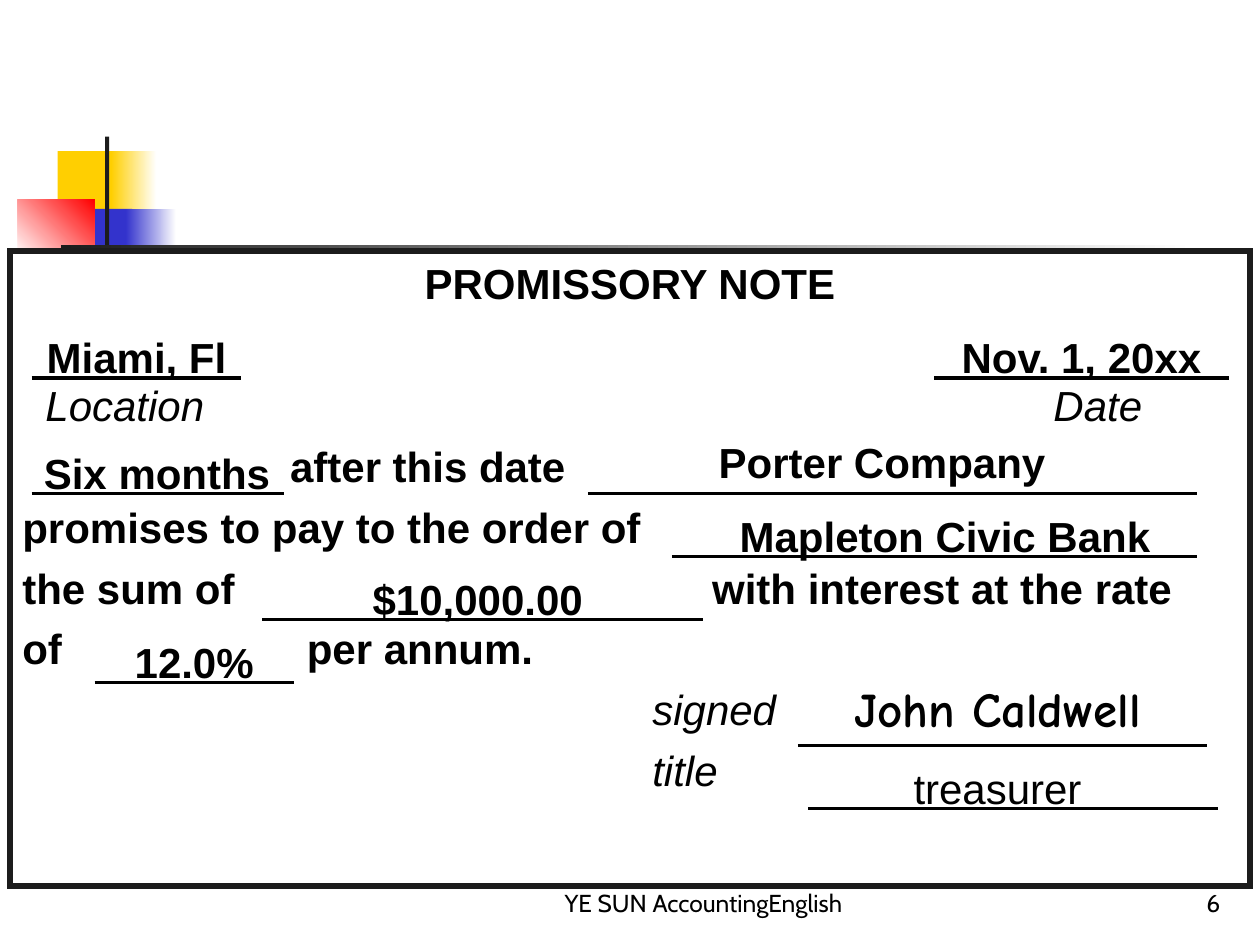
from typing import NamedTuple

import lxml.etree
import pptx
import pptx.dml.color
import pptx.enum.shapes
import pptx.enum.text
import pptx.oxml.ns
import pptx.util

# The grid has 120 columns and 90 rows, each a twelfth of an inch
CELL = pptx.util.Inches(1) // 12
ALIGN = pptx.enum.text.PP_ALIGN
ANCHOR = pptx.enum.text.MSO_ANCHOR
BLACK, CHARCOAL, WHITE = "000000", "1C1C1C", "FFFFFF"
YELLOW, BLUE, RED = "FFCF01", "3333CC", "FF0000"


class Area(NamedTuple):
    column: float
    row: float
    columns: float
    rows: float


class Block(NamedTuple):
    area: Area
    start: str
    end: str = ""
    angle: int = 0


class Style(NamedTuple):
    size: float = 24
    font: str = "Arial"
    bold: bool = True
    italic: bool = False


class Entry(NamedTuple):
    text: str
    area: Area
    align: ALIGN = ALIGN.CENTER
    style: Style = Style()
    anchor: ANCHOR = ANCHOR.TOP


class Rule(NamedTuple):
    first: float
    last: float
    row: float


class NoteLine(NamedTuple):
    text: str
    style: Style = Style()
    tabs: tuple[float, ...] = ()  # tab stops, in columns from the text edge
    space: float = 6
    align: ALIGN = ALIGN.LEFT


ITALIC = Style(bold=False, italic=True)
FOOTER = Style(14, "Cabin", False)

BLOCKS = [
    Block(Area(5.5, 14.4, 5.8, 6.2), YELLOW),
    Block(Area(10.6, 14.4, 4.3, 6.2), YELLOW, WHITE),
    Block(Area(7.1, 19.9, 5.5, 6.2), BLUE),
    Block(Area(12, 19.9, 4.8, 6.2), BLUE, WHITE),
    Block(Area(1.7, 19, 7.3, 5.5), WHITE, RED, 45),
    Block(Area(10, 13, 0.4, 13.8), CHARCOAL),
    Block(Area(5.8, 23.3, 108, 0.4), CHARCOAL, WHITE),
]

PANEL = Area(0.95, 23.9, 118.1, 60.5)
NOTE_LINES = [
    NoteLine("PROMISSORY NOTE", space=0, align=ALIGN.CENTER),
    NoteLine("\tLocation\tDate", ITALIC, (2.2, 98.2), 41),
    NoteLine("\tafter this date", tabs=(25.5,)),
    NoteLine("promises to pay to the order of"),
    NoteLine("the sum of\twith interest at the rate", tabs=(65.7,)),
    NoteLine("of\tper annum.", tabs=(27.1,)),
    NoteLine("\tsigned", ITALIC, (60,)),
    NoteLine("\ttitle", ITALIC, (60,)),
]

RULES = [
    Rule(3, 23, 36), Rule(89, 117, 36),
    Rule(3, 27, 47), Rule(56, 114, 47),
    Rule(64, 114, 53), Rule(25, 67, 59), Rule(9, 28, 65),
    Rule(76, 115, 71), Rule(77, 116, 77),
]

ENTRIES = [
    Entry("Miami, Fl", Area(3, 31, 20, 6)),
    Entry("Nov. 1, 20xx", Area(88, 31, 30, 6)),
    Entry("Six months", Area(3, 42, 24, 6), ALIGN.LEFT),
    Entry("Porter Company", Area(55, 41, 58, 6)),
    Entry("Mapleton Civic Bank", Area(65, 48, 50, 6)),
    Entry("$10,000.00", Area(25, 54, 41, 6)),
    Entry("12.0%", Area(9, 60, 19, 6)),
    Entry("John Caldwell", Area(75, 64, 40, 6.7), style=Style(28, "Comic Neue")),
    Entry("treasurer", Area(75, 72, 40, 6), style=Style(bold=False)),
    Entry("YE SUN AccountingEnglish", Area(48, 82, 38, 6), ALIGN.CENTER, FOOTER, ANCHOR.BOTTOM),
    Entry("6", Area(92.4, 82, 25, 6), ALIGN.RIGHT, FOOTER, ANCHOR.BOTTOM),
]


def color(value: str) -> pptx.dml.color.RGBColor:
    return pptx.dml.color.RGBColor.from_string(value)


def cells(*counts: float) -> list[int]:
    return [round(count * CELL) for count in counts]


def add_run(paragraph, text: str, style: Style) -> None:
    run = paragraph.add_run()
    run.text = text
    run.font.size = pptx.util.Pt(style.size)
    run.font.name = style.font
    run.font.bold = style.bold
    run.font.italic = style.italic
    run.font.color.rgb = color(BLACK)


def draw_block(slide, block: Block):
    kind = pptx.enum.shapes.MSO_SHAPE.RECTANGLE
    shape = slide.shapes.add_shape(kind, *cells(*block.area))
    shape.shadow.inherit = False
    shape.line.fill.background()
    if block.end:
        shape.fill.gradient()
        shape.fill.gradient_angle = block.angle
        for stop, value in zip(shape.fill.gradient_stops, (block.start, block.end)):
            stop.color.rgb = color(value)
    else:
        shape.fill.solid()
        shape.fill.fore_color.rgb = color(block.start)
    return shape


def set_tabs(paragraph, stops: tuple[float, ...]) -> None:
    properties = paragraph._p.get_or_add_pPr()
    tabs = lxml.etree.SubElement(properties, pptx.oxml.ns.qn("a:tabLst"))
    for position in cells(*stops):
        lxml.etree.SubElement(tabs, pptx.oxml.ns.qn("a:tab"), pos=str(position), algn="l")


def draw_note(slide) -> None:
    panel = draw_block(slide, Block(PANEL, WHITE))
    panel.line.color.rgb = color(CHARCOAL)
    panel.line.width = pptx.util.Pt(3)
    # Square corners
    outline = panel.line._get_or_add_ln()
    lxml.etree.SubElement(outline, pptx.oxml.ns.qn("a:miter"), lim="800000")
    frame = panel.text_frame
    frame.word_wrap = True
    frame.vertical_anchor = ANCHOR.TOP
    for index, line in enumerate(NOTE_LINES):
        paragraph = frame.add_paragraph() if index else frame.paragraphs[0]
        paragraph.alignment = line.align
        paragraph.space_before = pptx.util.Pt(line.space)
        add_run(paragraph, line.text, line.style)
        if line.tabs:
            set_tabs(paragraph, line.tabs)


def draw_rule(slide, rule: Rule) -> None:
    kind = pptx.enum.shapes.MSO_CONNECTOR.STRAIGHT
    ends = cells(rule.first, rule.row, rule.last, rule.row)
    connector = slide.shapes.add_connector(kind, *ends)
    connector.line.color.rgb = color(BLACK)
    connector.line.width = pptx.util.Pt(2)
    lxml.etree.SubElement(connector._element.spPr, pptx.oxml.ns.qn("a:effectLst"))


def draw_entry(slide, entry: Entry) -> None:
    frame = slide.shapes.add_textbox(*cells(*entry.area)).text_frame
    frame.word_wrap = True
    frame.vertical_anchor = entry.anchor
    paragraph = frame.paragraphs[0]
    paragraph.alignment = entry.align
    add_run(paragraph, entry.text, entry.style)


def main() -> None:
    presentation = pptx.Presentation()
    presentation.slide_width, presentation.slide_height = cells(120, 90)
    slide = presentation.slides.add_slide(presentation.slide_layouts[6])
    # Coloured corner motif
    for block in BLOCKS:
        draw_block(slide, block)
    # Printed form with its blanks
    draw_note(slide)
    for rule in RULES:
        draw_rule(slide, rule)
    # Filled-in answers and footer
    for entry in ENTRIES:
        draw_entry(slide, entry)
    presentation.save("out.pptx")


if __name__ == "__main__":
    main()
